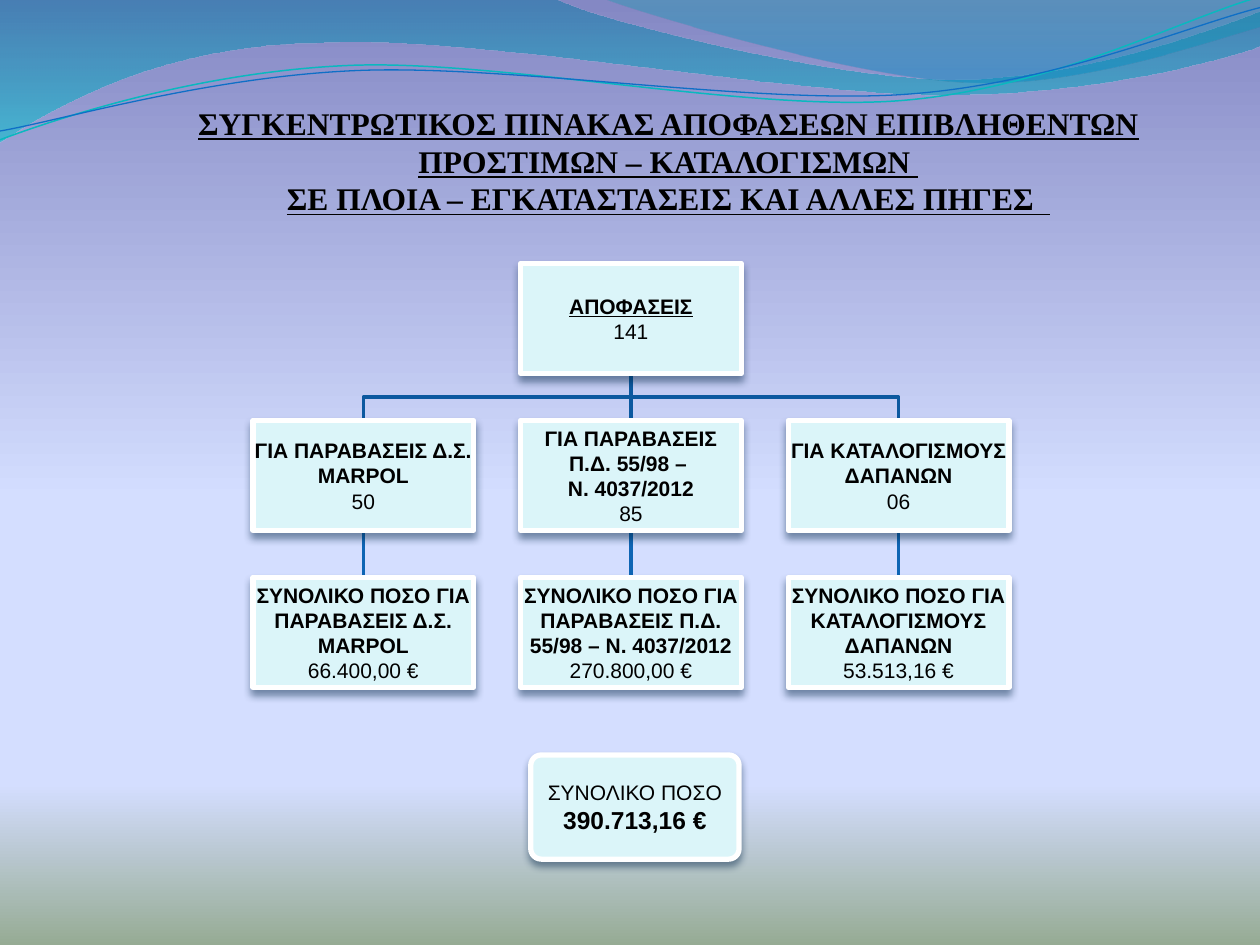
from math import cos, radians, sin

from lxml import etree
from pptx import Presentation
from pptx.dml.color import RGBColor
from pptx.enum.shapes import MSO_SHAPE
from pptx.enum.text import MSO_ANCHOR, PP_ALIGN
from pptx.oxml.ns import qn
from pptx.util import Cm, Pt

RECTANGLE, ROUNDED = MSO_SHAPE.RECTANGLE, MSO_SHAPE.ROUNDED_RECTANGLE
MIDDLE, BOTTOM, CENTER = MSO_ANCHOR.MIDDLE, MSO_ANCHOR.BOTTOM, PP_ALIGN.CENTER

PLAIN = {"name": "Arial", "size": Pt(12), "bold": False}
LABEL = {**PLAIN, "bold": True}
HEADING = {**LABEL, "underline": True}
AMOUNT = {**LABEL, "size": Pt(14)}
TITLE = {**HEADING, "name": "Times New Roman", "size": Pt(18)}

TITLE_TEXT = ("ΣΥΓΚΕΝΤΡΩΤΙΚΟΣ ΠΙΝΑΚΑΣ ΑΠΟΦΑΣΕΩΝ ΕΠΙΒΛΗΘΕΝΤΩΝ ΠΡΟΣΤΙΜΩΝ – ΚΑΤΑΛΟΓΙΣΜΩΝ \v"
              "ΣΕ ΠΛΟΙΑ – ΕΓΚΑΤΑΣΤΑΣΕΙΣ ΚΑΙ ΑΛΛΕΣ ΠΗΓΕΣ  ")
ROOT = [("ΑΠΟΦΑΣΕΙΣ", HEADING), ("141", PLAIN)]
# Each branch: the decisions box, then the box with their total
BRANCHES = [
    ([("ΓΙΑ ΠΑΡΑΒΑΣΕΙΣ Δ.Σ. MARPOL", LABEL), ("50", PLAIN)],
     [("ΣΥΝΟΛΙΚΟ ΠΟΣΟ ΓΙΑ ΠΑΡΑΒΑΣΕΙΣ Δ.Σ. MARPOL", LABEL), ("66.400,00 €", PLAIN)]),
    ([("ΓΙΑ ΠΑΡΑΒΑΣΕΙΣ Π.Δ. 55/98 – ", LABEL), ("Ν. 4037/2012", LABEL), ("85", PLAIN)],
     [("ΣΥΝΟΛΙΚΟ ΠΟΣΟ ΓΙΑ ΠΑΡΑΒΑΣΕΙΣ Π.Δ. 55/98 – Ν. 4037/2012", LABEL),
      ("270.800,00 €", PLAIN)]),
    ([("ΓΙΑ ΚΑΤΑΛΟΓΙΣΜΟΥΣ ΔΑΠΑΝΩΝ", LABEL), ("06", PLAIN)],
     [("ΣΥΝΟΛΙΚΟ ΠΟΣΟ ΓΙΑ ΚΑΤΑΛΟΓΙΣΜΟΥΣ ΔΑΠΑΝΩΝ", LABEL), ("53.513,16 €", PLAIN)]),
]
TOTAL = [("ΣΥΝΟΛΙΚΟ ΠΟΣΟ", PLAIN), ("390.713,16 €", AMOUNT)]

# Waves in tenths of the region width: box, then pieces of one point (line) or three (curve)
BANDS = [
    ((-0.01, -0.01, 10.02, 1.14),
     [[(0, -0.01)], [(4.4, -0.01)], [(4.76, 0.17), (6.64, 0.63), (7.58, 0.63)],
      [(8.53, 0.63), (9.58, 0.26), (10, 0.09)], [(10.01, 0.36)],
      [(9.83, 0.44), (8.7, 0.76), (7.46, 0.75)], [(6.22, 0.75), (3.82, 0.28), (2.57, 0.34)],
      [(1.29, 0.35), (0.46, 0.83), (-0.01, 1.13)], [(0, -0.01)]],
     [(0, "0074A1", 45), (100, "00C6CF", 55)]),
    ((4.79, -0.01, 5.21, 0.7),
     [[(4.79, -0.01)], [(5.09, 0.11), (6.82, 0.62), (7.69, 0.65)],
      [(8.56, 0.69), (9.61, 0.32), (10, 0.21)], [(10, 0)], [(4.79, -0.01)]],
     [(0, "00A1A9", 30), (80, "008BBF", 45)]),
]
TILT = 2.7
STRANDS = [
    ((-0.02, 0.22, 10.02, 0.71),
     [[(0, 1.11)], [(0.48, 0.93), (1.58, 0.57), (2.77, 0.52)],
      [(3.95, 0.47), (5.93, 0.89), (7.13, 0.8)], [(8.33, 0.71), (9.38, 0.15), (9.98, -0.02)]],
     "0AB8BF", 0.85),
    ((-0.02, 0.3, 10.03, 0.58),
     [[(0, 1.04)], [(0.47, 0.96), (1.64, 0.61), (2.83, 0.56)],
      [(4.03, 0.51), (5.97, 0.83), (7.17, 0.75)], [(8.36, 0.67), (9.41, 0.21), (10, 0.06)]],
     "0F6FC6", 0.75),
]


def color(value):
    return RGBColor.from_string(value)


def add_color(parent, value, opacity):
    node = etree.SubElement(parent, qn("a:srgbClr"), val=value)
    if opacity < 100:
        etree.SubElement(node, qn("a:alpha"), val=str(opacity * 1000))


def fill_gradient(owner, fill, stops):
    """Fill from top to bottom with (position, colour, opacity) stops."""
    fill.gradient()
    fill.gradient_angle = 270
    stop_list = owner.element.find(".//" + qn("a:gsLst"))
    for old_stop in list(stop_list):
        stop_list.remove(old_stop)
    for position, value, opacity in stops:
        stop = etree.SubElement(stop_list, qn("a:gs"), pos=str(position * 1000))
        add_color(stop, value, opacity)


def set_line(shape, value, width):
    shape.line.color.rgb = color(value)
    shape.line.width = Pt(width)


def add_outline(slide, box, pieces, close=False):
    """Draw lines and cubic curves in a freeform that spans the box."""
    left, top, width, height = box
    builder = slide.shapes.build_freeform(Cm(left), Cm(top))
    builder.add_line_segments([(Cm(left + width), Cm(top + height))], close=False)
    shape = builder.convert_to_shape()
    outline = shape.element.find(".//" + qn("a:path"))
    for old_segment in list(outline):
        outline.remove(old_segment)
    for index, piece in enumerate(pieces):
        tag = "a:moveTo" if index == 0 else "a:lnTo" if len(piece) == 1 else "a:cubicBezTo"
        segment = etree.SubElement(outline, qn(tag))
        for x, y in piece:
            etree.SubElement(segment, qn("a:pt"), x=str(Cm(x - left)), y=str(Cm(y - top)))
    if close:
        etree.SubElement(outline, qn("a:close"))
    else:
        shape.fill.background()
    shape.shadow.inherit = False
    return shape


def write_text(shape, lines, anchor, margins):
    frame = shape.text_frame
    frame.word_wrap = True
    frame.vertical_anchor = anchor
    for side, margin in zip(("left", "top", "right", "bottom"), margins):
        setattr(frame, "margin_" + side, Cm(margin))
    for index, (text, style) in enumerate(lines):
        paragraph = frame.paragraphs[0] if index == 0 else frame.add_paragraph()
        paragraph.text = text
        paragraph.alignment = CENTER
        for run in paragraph.runs:
            run.font.color.rgb = color("000000")
            for name, value in style.items():
                setattr(run.font, name, value)


def add_card(slide, kind, lines, left, top, width, height):
    card = slide.shapes.add_shape(kind, Cm(left), Cm(top), Cm(width), Cm(height))
    if kind == ROUNDED:
        card.adjustments[0] = 0.1
    card.fill.solid()
    card.fill.fore_color.rgb = color("DBF5F9")
    set_line(card, "FFFFFF", 3)
    card.shadow.inherit = False
    effects = card.element.spPr.find(qn("a:effectLst"))
    shadow = etree.SubElement(effects, qn("a:outerShdw"), blurRad=str(Pt(4.5)),
                              dist=str(Pt(3)), dir="5400000", rotWithShape="0")
    add_color(shadow, "042747", 48)
    write_text(card, lines, MIDDLE, (0.03,) * 4)


def turn(point, box, degrees):
    """Turn a point clockwise about the centre of the box."""
    left, top, width, height = box
    center_x, center_y = left + width / 2, top + height / 2
    x, y = point[0] - center_x, point[1] - center_y
    cosine, sine = cos(radians(degrees)), sin(radians(degrees))
    return center_x + x * cosine - y * sine, center_y + x * sine + y * cosine


def add_waves(slide, left, top, width):
    unit = width / 10

    def place(box, pieces, tilt=0):
        x, y, box_width, box_height = box
        placed_box = (left + x * unit, top + y * unit, box_width * unit, box_height * unit)
        placed = [[(left + px * unit, top + py * unit)
                   for px, py in (turn(point, box, tilt) for point in piece)]
                  for piece in pieces]
        return placed_box, placed

    for box, pieces, stops in BANDS:
        band = add_outline(slide, *place(box, pieces), close=True)
        fill_gradient(band, band.fill, stops)
        band.line.fill.background()
    # Strands are drawn level, then tilted back
    for box, pieces, value, weight in STRANDS:
        strand = add_outline(slide, *place(box, pieces, TILT))
        strand.rotation = 360 - TILT
        set_line(strand, value, weight)


def add_title(slide, left, top, width, height):
    title = slide.shapes.add_textbox(Cm(left), Cm(top), Cm(width), Cm(height))
    write_text(title, [(TITLE_TEXT, TITLE)], BOTTOM, (0, 0.13, 0, 0))


def add_link(slide, start, end, value):
    """Link two points, with a bend halfway down if they are not in line."""
    (start_x, start_y), (end_x, end_y) = start, end
    points = [start, end]
    left, width = min(start_x, end_x), abs(end_x - start_x)
    if width < 0.01:
        left, width = start_x - 0.13, 0.25
    else:
        bend_y = (start_y + end_y) / 2
        points[1:1] = [(start_x, bend_y), (end_x, bend_y)]
    box = (left, start_y, width, end_y - start_y)
    set_line(add_outline(slide, box, [[point] for point in points]), value, 2)


def add_tree(slide, left, top, width, height):
    card_width, card_height = 4.45, 2.22
    column_step = (width - card_width) / (len(BRANCHES) - 1)
    row_step = (height - card_height) / 2
    rows = [top + row * row_step for row in range(3)]
    columns = [left + column * column_step for column in range(len(BRANCHES))]
    root_left = left + (width - card_width) / 2
    root_end = (root_left + card_width / 2, rows[0] + card_height)

    # Links lie behind the cards
    for column in reversed(columns):
        x = column + card_width / 2
        add_link(slide, (x, rows[1] + card_height), (x, rows[2]), "0E65B4")
        add_link(slide, root_end, (x, rows[1]), "0C599F")

    add_card(slide, RECTANGLE, ROOT, root_left, rows[0], card_width, card_height)
    for column, branch in zip(columns, BRANCHES):
        for row, lines in zip(rows[1:], branch):
            add_card(slide, RECTANGLE, lines, column, row, card_width, card_height)


def main():
    presentation = Presentation()
    presentation.slide_width, presentation.slide_height = Cm(25.4), Cm(19.05)
    slide = presentation.slides.add_slide(presentation.slide_layouts[6])
    fill_gradient(slide, slide.background.fill,
                  [(0, "8488C4", 100), (53, "D4DEFF", 100),
                   (83, "D4DEFF", 100), (100, "96AB94", 100)])
    add_waves(slide, 0, 0, 25.4)
    add_title(slide, 2.9, 1.97, 21.15, 2.41)
    add_tree(slide, 5.1, 5.31, 15.24, 8.55)
    add_card(slide, ROUNDED, TOTAL, 10.7, 15.22, 4.2, 2.1)
    presentation.save("out.pptx")


if __name__ == "__main__":
    main()
